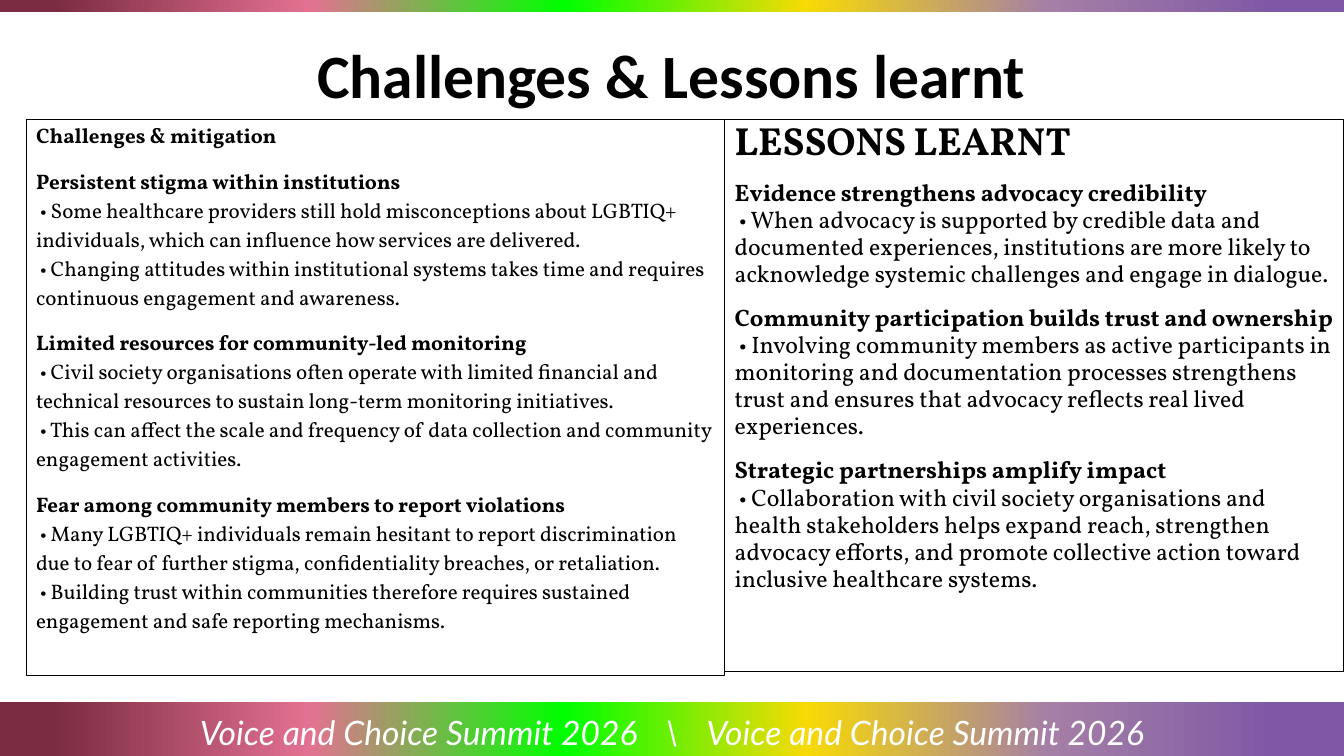
import copy

import pptx
import pptx.dml.color
import pptx.enum.shapes
import pptx.enum.text
import pptx.oxml
import pptx.oxml.ns
import pptx.util
from pptx.util import Pt

COLOURS = {
    "text": "000000", "footer": "FFFFFF", "purple": "7D59A5", "mauve": "A57FA6",
    "yellow": "F7DA06", "green": "00FF00", "pink": "E37191", "wine": "7B2C42",
}
RAINBOW = [(0, "purple"), (5, "purple"), (22, "mauve"), (40, "yellow"),
           (58, "green"), (77, "pink"), (96, "wine"), (100, "wine")]
WIDTH, HEIGHT = 960, 540
PANEL_TOP = 85.7
SUMMIT = "Voice and Choice Summit 2026"

CHALLENGES = [
    ("Persistent stigma within institutions", [
        "Some healthcare providers still hold misconceptions about LGBTIQ+ individuals, "
        "which can influence how services are delivered.",
        "Changing attitudes within institutional systems takes time and requires "
        "continuous engagement and awareness."]),
    ("Limited resources for community-led monitoring", [
        "Civil society organisations often operate with limited financial and technical "
        "resources to sustain long-term monitoring initiatives.",
        "This can affect the scale and frequency of data collection and community "
        "engagement activities."]),
    ("Fear among community members to report violations", [
        "Many LGBTIQ+ individuals remain hesitant to report discrimination due to fear of "
        "further stigma, confidentiality breaches, or retaliation.",
        "Building trust within communities therefore requires sustained engagement and "
        "safe reporting mechanisms."]),
]
LESSONS = [
    ("Evidence strengthens advocacy credibility", [
        "When advocacy is supported by credible data and documented experiences, "
        "institutions are more likely to acknowledge systemic challenges and engage in "
        "dialogue."]),
    ("Community participation builds trust and ownership", [
        "Involving community members as active participants in monitoring and "
        "documentation processes strengthens trust and ensures that advocacy reflects "
        "real lived experiences."]),
    ("Strategic partnerships amplify impact", [
        "Collaboration with civil society organisations and health stakeholders helps "
        "expand reach, strengthen advocacy efforts, and promote collective action toward "
        "inclusive healthcare systems."]),
]


def points(box):
    return [Pt(length) for length in box]


def colour(name):
    return pptx.dml.color.RGBColor.from_string(COLOURS[name])


def style_run(run, font_name, size, colour_name, bold=False, italic=False):
    run.font.name = font_name
    run.font.size = Pt(size)
    run.font.bold = bold
    run.font.italic = italic
    run.font.color.rgb = colour(colour_name)


def add_rainbow_band(slide, box):
    band = slide.shapes.add_shape(
        pptx.enum.shapes.MSO_SHAPE.RECTANGLE, *points(box))
    band.shadow.inherit = False
    band.line.fill.background()
    stops = "".join(
        f'<a:gs pos="{percent * 1000}"><a:srgbClr val="{COLOURS[name]}"/></a:gs>'
        for percent, name in RAINBOW)
    gradient = pptx.oxml.parse_xml(
        f'<a:gradFill {pptx.oxml.ns.nsdecls("a")} rotWithShape="1">'
        f'<a:gsLst>{stops}</a:gsLst><a:lin ang="10800000" scaled="0"/></a:gradFill>')
    geometry = band._element.spPr.find(pptx.oxml.ns.qn("a:prstGeom"))
    geometry.addnext(gradient)


def add_title(slide, box):
    title = slide.shapes.title
    title.left, title.top, title.width, title.height = points(box)
    frame = title.text_frame
    frame.text = "Challenges & Lessons learnt"
    frame.auto_size = pptx.enum.text.MSO_AUTO_SIZE.NONE
    frame.vertical_anchor = pptx.enum.text.MSO_ANCHOR.MIDDLE
    paragraph = frame.paragraphs[0]
    paragraph.alignment = pptx.enum.text.PP_ALIGN.CENTER
    style_run(paragraph.runs[0], "Calibri", 44, "text", bold=True)


def add_panel(slide, box, heading, heading_size, heading_spacing,
              topics, size, spacing):
    """Outlined box with a heading and topics, each with its bulleted lines."""
    panel = slide.shapes.add_textbox(*points(box))
    panel.line.color.rgb = colour("text")
    panel.line.width = Pt(0.75)
    frame = panel.text_frame
    frame.word_wrap = True
    frame.text = heading
    frame.paragraphs[0].line_spacing = heading_spacing
    style_run(frame.paragraphs[0].runs[0], "Vollkorn", heading_size, "text", bold=True)
    for topic, details in topics:
        paragraph = frame.add_paragraph()
        paragraph.text = "\v • ".join([topic, *details])
        paragraph.line_spacing = spacing
        paragraph.space_before = Pt(12)
        for index, run in enumerate(paragraph.runs):
            style_run(run, "Vollkorn", size, "text", bold=index == 0)
        # Line breaks take the text size too, so that they do not stretch the lines.
        for line_break in paragraph._p.findall(pptx.oxml.ns.qn("a:br")):
            line_break.append(copy.deepcopy(paragraph.runs[0].font._rPr))
    paragraph.space_after = Pt(12)


def add_footer(slide, box):
    left, top, width, height = box
    add_rainbow_band(slide, box)
    footer = slide.shapes.add_textbox(*points((left, top + 2, width, height - 5.5)))
    frame = footer.text_frame
    frame.word_wrap = True
    paragraph = frame.paragraphs[0]
    paragraph.alignment = pptx.enum.text.PP_ALIGN.CENTER
    paragraph.line_spacing = 1.07
    for text in (SUMMIT, " ", "\\", " ", SUMMIT):
        run = paragraph.add_run()
        run.text = text
        style_run(run, "Lato", 24, "footer", italic=True)
        if text == " ":
            run.font._rPr.set("spc", "1400")


def build_lessons_slide(presentation):
    slide = presentation.slides.add_slide(presentation.slide_layouts[5])
    add_rainbow_band(slide, (0, 0, WIDTH, 8.6))
    add_title(slide, (0, 19.4, WIDTH, 66.2))
    add_panel(slide, (18.7, PANEL_TOP, 499, 396.7),
              "Challenges & mitigation", 15, 0.9, CHALLENGES, 15, 1.15)
    add_panel(slide, (517.7, PANEL_TOP, 442.1, 393.8),
              "LESSONS LEARNT", 28, 0.8, LESSONS, 17, 0.95)
    add_footer(slide, (0, 501.1, WIDTH, 41))


def main():
    presentation = pptx.Presentation()
    presentation.slide_width = Pt(WIDTH)
    presentation.slide_height = Pt(HEIGHT)
    build_lessons_slide(presentation)
    presentation.save("out.pptx")


if __name__ == "__main__":
    main()
